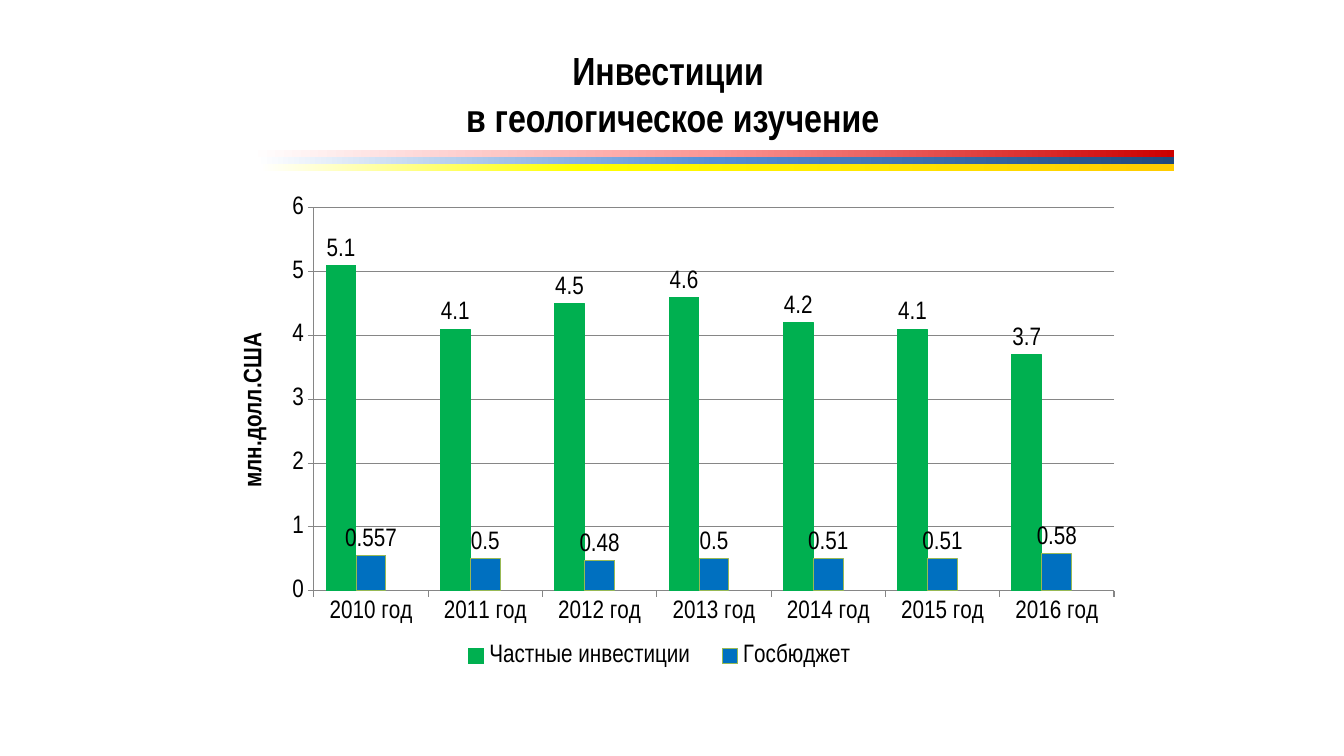
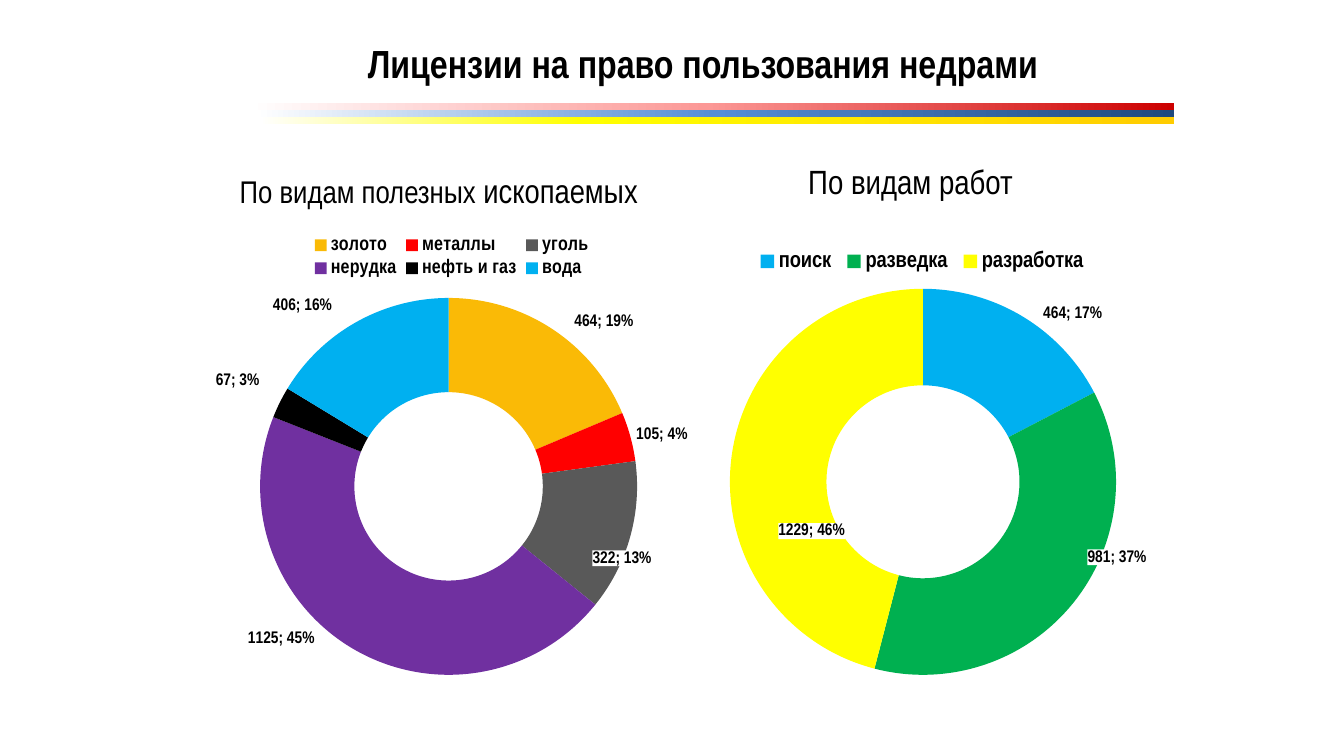
from copy import deepcopy
from math import cos, pi, sin

from pptx import Presentation
from pptx.chart.data import CategoryChartData
from pptx.dml.color import RGBColor
from pptx.enum.chart import XL_CHART_TYPE as ChartType
from pptx.enum.chart import XL_LABEL_POSITION as LabelPosition
from pptx.enum.chart import XL_LEGEND_POSITION as LegendPosition
from pptx.enum.chart import XL_TICK_MARK as TickMark
from pptx.enum.shapes import MSO_SHAPE as Shape
from pptx.enum.text import MSO_ANCHOR as Anchor
from pptx.enum.text import MSO_AUTO_SIZE as AutoSize
from pptx.enum.text import PP_ALIGN as Align
from pptx.oxml import parse_xml
from pptx.oxml.ns import nsdecls
from pptx.util import Inches, Pt

FONT = "Arial Narrow"
BLACK = RGBColor(0x00, 0x00, 0x00)
WHITE = RGBColor(0xFF, 0xFF, 0xFF)
GRAY = RGBColor(0x86, 0x86, 0x86)
GREEN = RGBColor(0x00, 0xB0, 0x50)
BLUE = RGBColor(0x00, 0x70, 0xC0)
OLIVE = RGBColor(0x98, 0xB9, 0x55)
GOLD = RGBColor(0xFA, 0xBA, 0x06)
RED = RGBColor(0xFF, 0x00, 0x00)
COAL = RGBColor(0x59, 0x59, 0x59)
PURPLE = RGBColor(0x70, 0x30, 0xA0)
SKY = RGBColor(0x00, 0xB0, 0xF0)
YELLOW = RGBColor(0xFF, 0xFF, 0x00)
AMBER = RGBColor(0xFF, 0xCC, 0x00)
PINK = RGBColor(0xFC, 0x98, 0x96)
CRIMSON = RGBColor(0xCC, 0x00, 0x00)
MID_BLUE = RGBColor(0x55, 0x8E, 0xD5)
NAVY = RGBColor(0x1F, 0x49, 0x7D)

STRIPE_RIGHT = 11.64
STRIPE_HEIGHT = 0.07
STRIPES = [
    (2.38, [(0.01, WHITE), (0.5, PINK), (1, CRIMSON)]),
    (2.54, [(0, WHITE), (0.5, MID_BLUE), (1, NAVY)]),
    (2.58, [(0, WHITE), (0.35, YELLOW), (1, AMBER)]),
]

INVESTMENT = {
    "box": (2.17, 1.86, 9.07, 4.84),
    "plot": (0.104, 0.042, 0.875, 0.785),
    "legend": (0.247, 0.925, 0.47, 0.07),
    "years": [f"{year} год" for year in range(2010, 2017)],
    "series": [
        ("Частные инвестиции", [5.1, 4.1, 4.5, 4.6, 4.2, 4.1, 3.7], GREEN, GREEN),
        ("Госбюджет", [0.557, 0.5, 0.48, 0.5, 0.51, 0.51, 0.58], BLUE, OLIVE),
    ],
}

LICENSES = [
    {
        "heading": [("По видам полезных ", 22.4), ("ископаемых", 23.8)],
        "heading_box": (2.14, 1.64, 4.42, 0.45),
        "box": (2.14, 2.25, 4.68, 4.58),
        "plot": (0.094, 0.154, 0.799, 0.817),
        "legend": (0.19, 0.01, 0.62, 0.11),
        "legend_size": 14,
        "slices": [
            ("золото", 464, GOLD, (5.99, 3.19)),
            ("металлы", 105, RED, (6.57, 4.31)),
            ("уголь", 322, COAL, (6.17, 5.54)),
            ("нерудка", 1125, PURPLE, (2.79, 6.34)),
            ("нефть и газ", 67, BLACK, (2.35, 3.78)),
            ("вода", 406, SKY, (3.0, 3.03)),
        ],
    },
    {
        "heading": [("По видам работ", 24)],
        "heading_box": (6.82, 1.55, 4.42, 0.7),
        "box": (6.82, 2.37, 4.56, 4.46),
        "plot": (0.092, 0.111, 0.84, 0.859),
        "legend": (0.14, 0.01, 0.74, 0.08),
        "legend_size": 16,
        "slices": [
            ("поиск", 464, SKY, (10.64, 3.11)),
            ("разведка", 981, GREEN, (11.08, 5.53)),
            ("разработка", 1229, YELLOW, (8.05, 5.27)),
        ],
    },
]


def inches(box):
    return [Inches(length) for length in box]


def set_font(font, size, bold=False):
    font.name = FONT
    font.size = Pt(size)
    font.bold = bold
    font.color.rgb = BLACK


def write(shape, runs, bold=False, anchor=Anchor.TOP, wrap=True):
    frame = shape.text_frame
    frame.auto_size = AutoSize.NONE
    frame.word_wrap = wrap
    frame.vertical_anchor = anchor
    paragraph = frame.paragraphs[0]
    paragraph.alignment = Align.CENTER
    for text, size in runs:
        if text == "\n":
            paragraph.add_line_break()
            continue
        run = paragraph.add_run()
        run.text = text
        set_font(run.font, size, bold)


def add_title(slide, lines, box, wrap=True):
    title = slide.shapes.title
    title.left, title.top, title.width, title.height = inches(box)
    runs = [(lines[0], 28)]
    for line in lines[1:]:
        runs += [("\n", 28), (line, 28)]
    write(title, runs, bold=True, anchor=Anchor.MIDDLE, wrap=wrap)


def add_stripes(slide, top):
    group = slide.shapes.add_group_shape()
    for row, (left, stops) in enumerate(STRIPES):
        box = (left, top + row * STRIPE_HEIGHT, STRIPE_RIGHT - left, STRIPE_HEIGHT)
        stripe = group.shapes.add_shape(Shape.RECTANGLE, *inches(box))
        stripe.shadow.inherit = False
        stripe.line.fill.background()
        stripe.fill.gradient()
        stripe.fill.gradient_angle = 0
        stop_list = stripe._element.xpath(".//a:gsLst")[0]
        stop_list.append(deepcopy(stop_list[0]))
        for stop, (position, color) in zip(stripe.fill.gradient_stops, stops):
            stop.position = position
            stop.color.rgb = color


def manual_layout(modes="", **values):
    parts = "".join(f'<c:{key} val="{value:.4f}"/>' for key, value in values.items())
    return parse_xml(
        f'<c:layout {nsdecls("c")}><c:manualLayout>{modes}{parts}'
        "</c:manualLayout></c:layout>"
    )


def edge_layout(box, inner=False):
    target = '<c:layoutTarget val="inner"/>' if inner else ""
    modes = target + '<c:xMode val="edge"/><c:yMode val="edge"/>'
    return manual_layout(modes, **dict(zip("xywh", box)))


def add_chart(slide, kind, data, design, position, legend_size, legend_bold):
    chart = slide.shapes.add_chart(kind, *inches(design["box"]), data).chart
    chart.has_title = False
    set_font(chart.font, 18)
    chart.has_legend = True
    chart.legend.position = position
    chart.legend.include_in_layout = False
    set_font(chart.legend.font, legend_size, legend_bold)
    plot_area = chart._chartSpace.xpath(".//c:plotArea")[0]
    legend = chart.legend._element
    for parent in (plot_area, legend):
        for layout in parent.xpath("./c:layout"):
            parent.remove(layout)
    plot_area.insert(0, edge_layout(design["plot"], inner=True))
    legend.xpath("./c:legendPos")[0].addnext(edge_layout(design["legend"]))
    return chart


def add_investment_chart(slide):
    data = CategoryChartData()
    data.categories = INVESTMENT["years"]
    for name, values, _, _ in INVESTMENT["series"]:
        data.add_series(name, values)
    data.add_series("Series 3", [None] * len(INVESTMENT["years"]))
    chart = add_chart(slide, ChartType.COLUMN_CLUSTERED, data, INVESTMENT,
                      LegendPosition.BOTTOM, 18, False)
    hidden_entry = parse_xml(
        f'<c:legendEntry {nsdecls("c")}><c:idx val="2"/><c:delete val="1"/></c:legendEntry>'
    )
    chart.legend._element.xpath("./c:legendPos")[0].addnext(hidden_entry)

    plot = chart.plots[0]
    plot.gap_width = 82
    plot.overlap = -1
    plot.vary_by_categories = False
    for series, (_, _, fill, line) in zip(plot.series, INVESTMENT["series"]):
        series.format.fill.solid()
        series.format.fill.fore_color.rgb = fill
        series.format.line.color.rgb = line
        series.format.line.width = Pt(0.75)
        labels = series.data_labels
        labels.show_value = True
        labels.position = LabelPosition.OUTSIDE_END
        set_font(labels.font, 18)

    axis = chart.value_axis
    axis.minimum_scale, axis.maximum_scale, axis.major_unit = 0, 6, 1
    axis.has_major_gridlines = True
    axis.major_gridlines.format.line.color.rgb = GRAY
    axis.has_title = True
    paragraph = axis.axis_title.text_frame.paragraphs[0]
    run = paragraph.add_run()
    run.text = "млн.долл.США"
    set_font(run.font, 18, bold=True)
    for axis in (chart.category_axis, chart.value_axis):
        axis.major_tick_mark = TickMark.OUTSIDE
        axis.format.line.color.rgb = GRAY
        set_font(axis.tick_labels.font, 18)


def place_label(label, label_xml, design, middle, target):
    left, top, width, height = design["box"]
    x, y, w, h = design["plot"]
    radius = min(w * width, h * height) / 2 * 0.75
    home_x = left + (x + w / 2) * width + radius * sin(middle)
    home_y = top + (y + h / 2) * height - radius * cos(middle)
    offset = manual_layout(x=(target[0] - home_x) / width, y=(target[1] - home_y) / height)
    background = parse_xml(
        f'<c:spPr {nsdecls("c", "a")}><a:solidFill><a:srgbClr val="{WHITE}"/></a:solidFill>'
        "<a:ln><a:noFill/></a:ln></c:spPr>"
    )
    for old in label_xml.xpath("./c:layout | ./c:spPr"):
        label_xml.remove(old)
    label_xml.insert(1, offset)
    label_xml.insert(2, background)
    label_xml.xpath("./c:showPercent")[0].set("val", "1")
    label_xml.append(parse_xml(f'<c:separator {nsdecls("c")}>; </c:separator>'))


def add_license_chart(slide, design):
    slices = design["slices"]
    data = CategoryChartData()
    data.categories = [name for name, _, _, _ in slices]
    data.add_series("Series 1", [value for _, value, _, _ in slices])
    chart = add_chart(slide, ChartType.DOUGHNUT, data, design,
                      LegendPosition.TOP, design["legend_size"], True)
    series = chart.plots[0].series[0]
    total = sum(value for _, value, _, _ in slices)
    start = 0
    for index, (_, value, color, target) in enumerate(slices):
        point = series.points[index]
        point.format.fill.solid()
        point.format.fill.fore_color.rgb = color
        point.format.line.fill.background()
        set_font(point.data_label.font, 12, bold=True)
        label_xml = series._element.xpath(f'.//c:dLbl[c:idx/@val="{index}"]')[0]
        middle = 2 * pi * (start + value / 2) / total
        place_label(point.data_label, label_xml, design, middle, target)
        start += value
    for leader in chart._chartSpace.xpath(".//c:showLeaderLines"):
        leader.set("val", "0")


def main():
    presentation = Presentation()
    presentation.slide_width = Inches(13.33)
    presentation.slide_height = Inches(7.5)
    title_only = presentation.slide_layouts[5]

    slide = presentation.slides.add_slide(title_only)
    add_investment_chart(slide)
    add_title(slide, ["Инвестиции ", "в геологическое изучение"], (0.67, 0.3, 12, 1.25))
    add_stripes(slide, 1.49)

    slide = presentation.slides.add_slide(title_only)
    add_title(slide, ["Лицензии на право пользования недрами"],
              (2.99, 0.34, 7.96, 0.57), wrap=False)
    add_stripes(slide, 1.02)
    for design in LICENSES:
        heading = slide.shapes.add_textbox(*inches(design["heading_box"]))
        write(heading, design["heading"])
        add_license_chart(slide, design)

    presentation.save("out.pptx")


if __name__ == "__main__":
    main()
